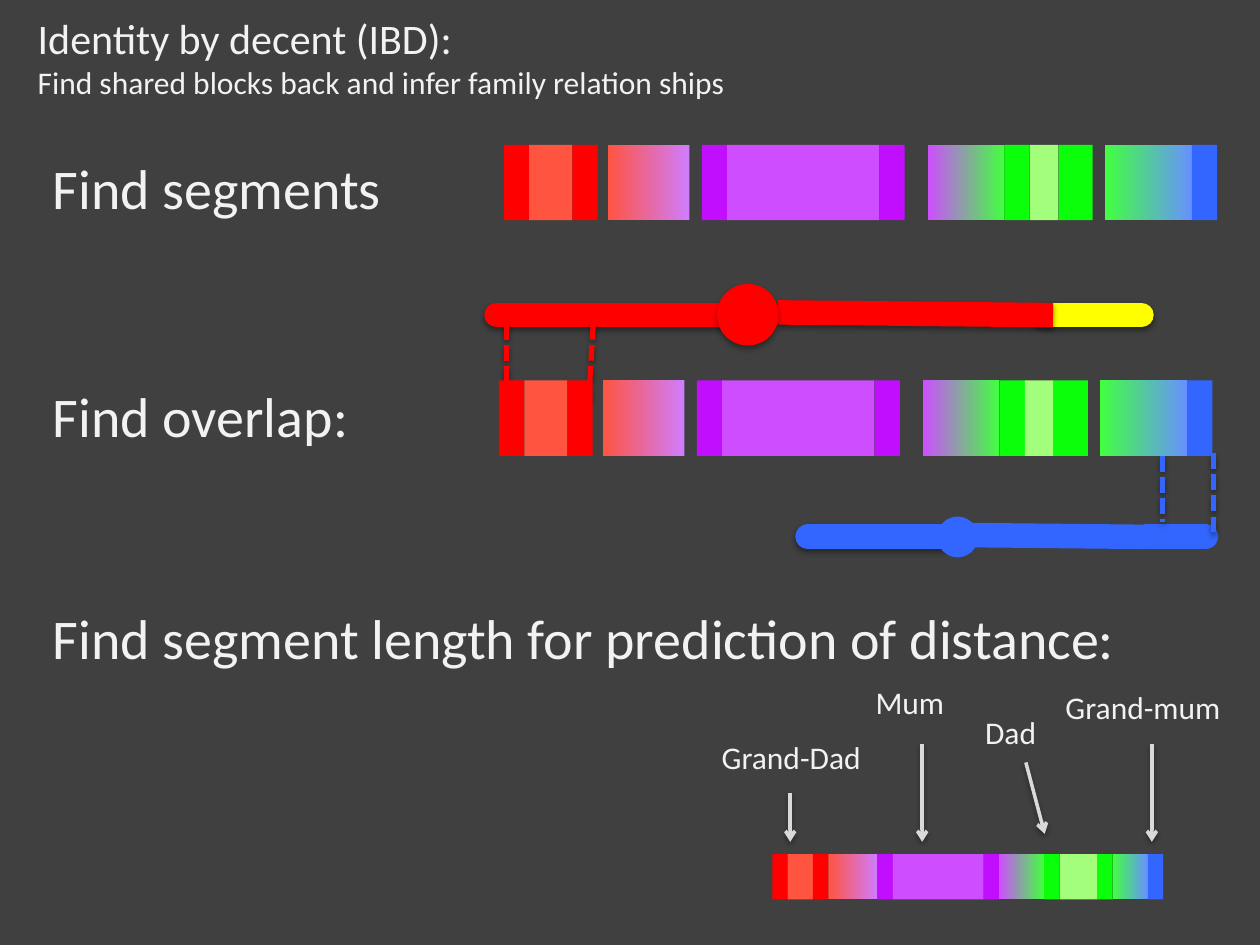
import lxml.etree
import pptx
import pptx.dml.color
import pptx.enum.dml
import pptx.enum.shapes
import pptx.enum.text
import pptx.oxml.ns
import pptx.util

Cm, Pt = pptx.util.Cm, pptx.util.Pt
qn = pptx.oxml.ns.qn

THEME = {
    "font": "Calibri", "head": 24, "label": 18, "step": 32,
    "back": "404040", "text": "F2F2F2", "arrow": "D9D9D9",
    "red": "FF0000", "pale red": "FF5440",
    "violet": "C10EFF", "pale violet": "CE4EFF",
    "green": "0BFF0B", "pale green": "A3FF7B",
    "blue": "3366FF", "yellow": "FFFF00",
    "red-violet": ("FF5440", "CF7DFF"),
    "violet-green": ("CE4EFF", "42FF40"),
    "green-blue": ("42FF40", "6791FF"),
}

# Segments from left to right
BAND = ["red", "pale red", "red", "red-violet", "violet", "pale violet", "violet",
        "violet-green", "green", "pale green", "green", "green-blue", "blue"]
# Widths of the segments, then the gap that follows a segment (by its index)
WIDE = [0.51, 0.87, 0.51, 1.65, 0.51, 3.07, 0.51, 1.55, 0.51, 0.58, 0.69, 1.75, 0.51]
GAPS = {2: 0.2, 3: 0.25, 6: 0.46, 10: 0.25}
SMALL = [0.31, 0.51, 0.31, 0.99, 0.31, 1.83, 0.31, 0.91, 0.31, 0.76, 0.31, 0.71, 0.31]

# Left, top, height, widths, gaps
FOUND = (10.16, 2.92, 1.52, WIDE, GAPS)
MATCH = (10.06, 7.67, 1.52, WIDE, GAPS)
JOINED = (15.57, 17.22, 0.91, SMALL, {})

# Left, top, width, height, lines of (text, size)
TEXTS = [
    (0.51, 0.13, 14.55, 2.06,
     [("Identity by decent (IBD):", "head"),
      ("Find shared blocks back and infer family relation ships", "label")]),
    (0.81, 2.97, 7.21, 1.63, [("Find segments", "step")]),
    (0.81, 7.57, 6.55, 1.63, [("Find overlap:", "step")]),
    (0.81, 12.04, 22.23, 1.63,
     [("Find segment length for prediction of distance:", "step")]),
    (14.3, 14.76, 3.35, 1.02, [("Grand-Dad", "label")]),
    (17.4, 13.64, 1.9, 1.02, [("Mum", "label")]),
    (19.61, 14.25, 1.55, 1.02, [("Dad", "label")]),
    (21.23, 13.74, 3.68, 1.02, [("Grand-mum", "label")]),
]

# Start x, start y, end x, end y
ARROWS = [(15.93, 15.98, 15.93, 16.97), (18.59, 14.99, 18.59, 16.97),
          (20.68, 15.37, 21.06, 16.81), (23.22, 14.99, 23.22, 16.97)]
DASHES = [("red", 11.96, 6.53, 11.86, 8.15), ("red", 10.21, 6.53, 10.21, 8.15),
          ("blue", 24.46, 9.14, 24.46, 10.77), ("blue", 23.44, 9.19, 23.44, 10.52)]
# Colour, cap, shadow, start x, start y, end x, end y
ARMS = [("red", "rnd", True, 10.01, 6.35, 14.55, 6.35),
        ("yellow", "rnd", True, 21.03, 6.35, 23.01, 6.35),
        ("red", "sq", True, 15.93, 6.3, 20.98, 6.35),
        ("blue", "rnd", True, 16.28, 10.82, 19.0, 10.82),
        ("blue", "rnd", False, 23.11, 10.82, 24.31, 10.82),
        ("blue", "sq", False, 19.81, 10.79, 22.83, 10.82)]
# Colour, shadow, left, top, size
KNOTS = [("red", True, 14.56, 5.83, 1.03), ("blue", False, 19.0, 10.52, 0.61)]


def tint(name):
    return pptx.dml.color.RGBColor.from_string(THEME[name])


def shade(item, blur=3.1, drop=1.6, part=38):
    """Give the item a soft black shadow straight below it."""
    props = item._element.spPr
    base = props.find(qn("a:effectLst"))
    cast = lxml.etree.SubElement(base, qn("a:outerShdw"), {
        "blurRad": str(Pt(blur)), "dist": str(Pt(drop)),
        "dir": "5400000", "rotWithShape": "0"})
    hue = lxml.etree.SubElement(cast, qn("a:srgbClr"), val="000000")
    lxml.etree.SubElement(hue, qn("a:alpha"), val=str(part * 1000))


def draw_line(slide, ends, name, width, cast=True, cap="flat"):
    line = slide.shapes.add_connector(
        pptx.enum.shapes.MSO_CONNECTOR.STRAIGHT, *map(Cm, ends))
    line.line.color.rgb = tint(name)
    line.line.width = Pt(width)
    line.line._ln.set("cap", cap)
    lxml.etree.SubElement(line._element.spPr, qn("a:effectLst"))
    if cast:
        shade(line)
    return line


def draw_band(slide, left, top, height, widths, gaps):
    for i, (name, width) in enumerate(zip(BAND, widths)):
        box = slide.shapes.add_shape(pptx.enum.shapes.MSO_SHAPE.RECTANGLE,
                                     Cm(left), Cm(top), Cm(width), Cm(height))
        box.line.fill.background()
        box.shadow.inherit = False
        if isinstance(THEME[name], tuple):
            box.fill.gradient()
            box.fill.gradient_angle = 0
            for stop, place, hue in zip(box.fill.gradient_stops, (0, 1), THEME[name]):
                stop.position = place
                stop.color.rgb = pptx.dml.color.RGBColor.from_string(hue)
        else:
            box.fill.solid()
            box.fill.fore_color.rgb = tint(name)
        left += width + gaps.get(i, 0)


def draw_knot(slide, name, cast, left, top, size):
    knot = slide.shapes.add_shape(pptx.enum.shapes.MSO_SHAPE.OVAL,
                                  Cm(left), Cm(top), Cm(size), Cm(size))
    knot.fill.solid()
    knot.fill.fore_color.rgb = tint(name)
    knot.line.color.rgb = tint(name)
    knot.line.width = Pt(6)
    knot.shadow.inherit = False
    if cast:
        shade(knot, drop=1.8, part=35)


def add_text(slide, left, top, width, height, lines):
    frame = slide.shapes.add_textbox(Cm(left), Cm(top), Cm(width), Cm(height)).text_frame
    frame.word_wrap = False
    frame.auto_size = pptx.enum.text.MSO_AUTO_SIZE.SHAPE_TO_FIT_TEXT
    for i, (text, size) in enumerate(lines):
        para = frame.add_paragraph() if i else frame.paragraphs[0]
        run = para.add_run()
        run.text = text
        run.font.name = THEME["font"]
        run.font.size = Pt(THEME[size])
        run.font.color.rgb = tint("text")


def main():
    deck = pptx.Presentation()
    deck.slide_width, deck.slide_height = Cm(25.4), Cm(19.05)
    slide = deck.slides.add_slide(deck.slide_layouts[6])
    slide.background.fill.solid()
    slide.background.fill.fore_color.rgb = tint("back")

    for ends in ARROWS:
        line = draw_line(slide, ends, "arrow", 2)
        lxml.etree.SubElement(line.line._ln, qn("a:tailEnd"), type="arrow")
    draw_band(slide, *JOINED)
    draw_band(slide, *FOUND)
    for name, cap, cast, *ends in ARMS:
        draw_line(slide, ends, name, 14, cast, cap)
    for knot in KNOTS:
        draw_knot(slide, *knot)
    for name, *ends in DASHES:
        line = draw_line(slide, ends, name, 3)
        line.line.dash_style = pptx.enum.dml.MSO_LINE.SQUARE_DOT
    draw_band(slide, *MATCH)
    for text in TEXTS:
        add_text(slide, *text)
    deck.save("out.pptx")


if __name__ == "__main__":
    main()
